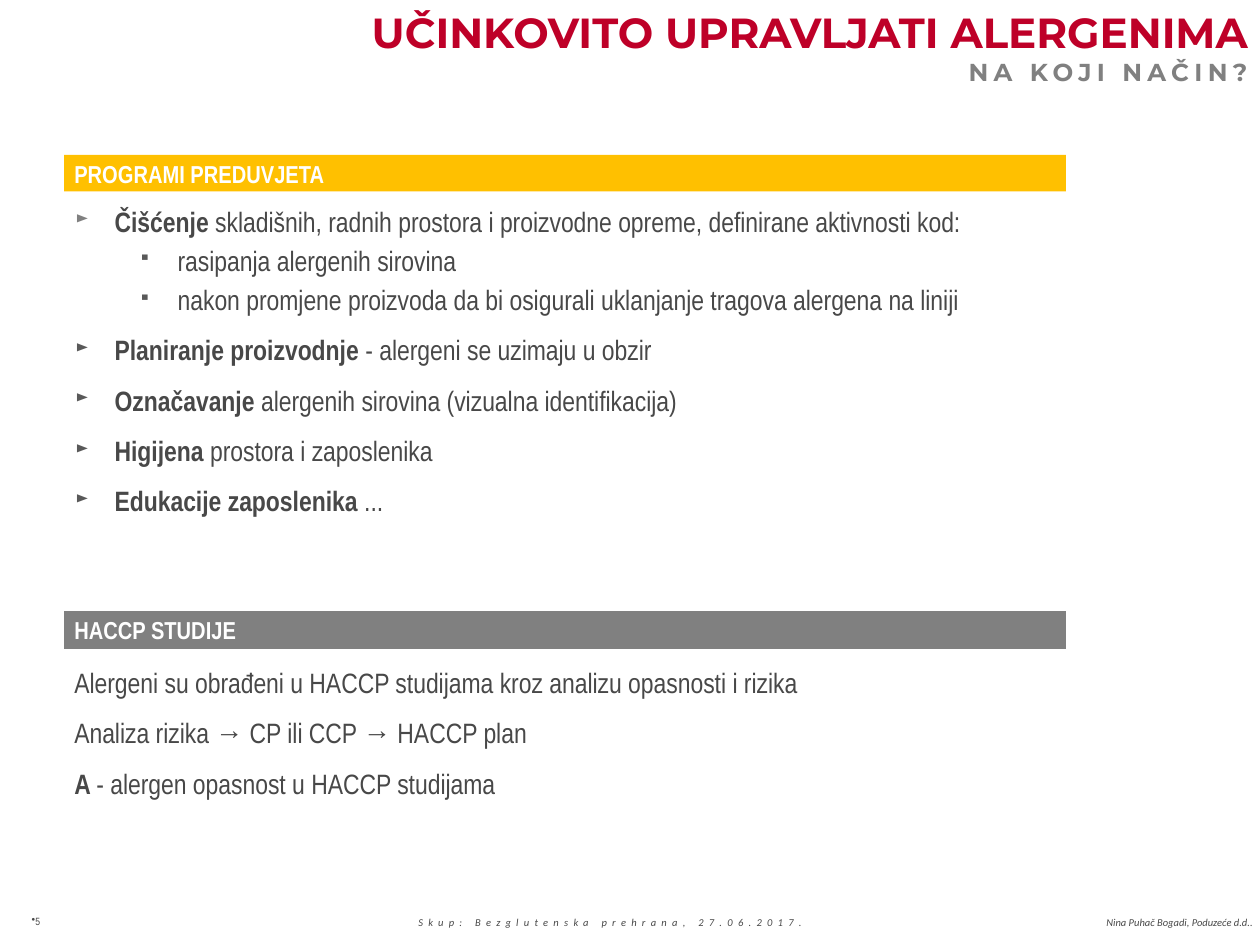
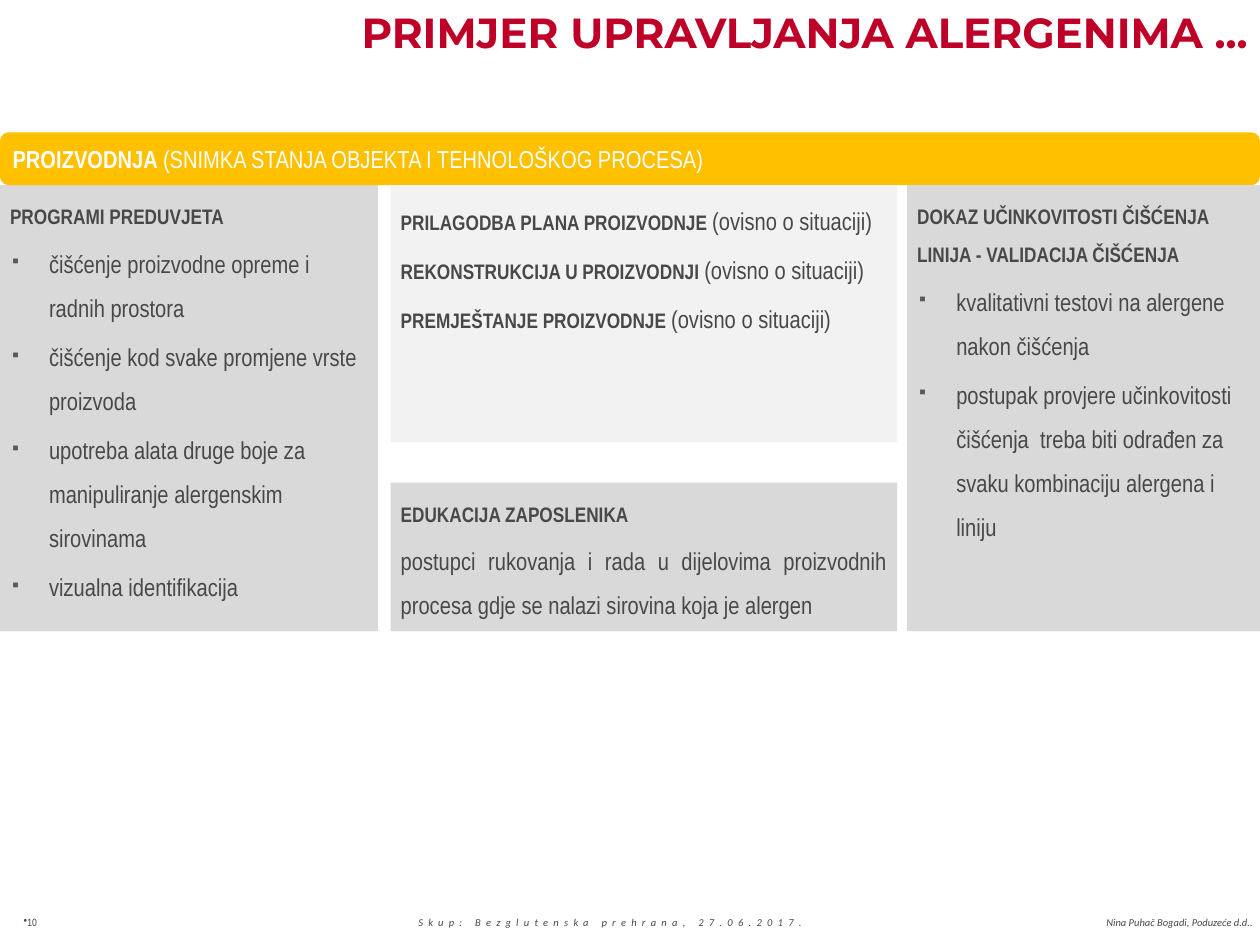
from dataclasses import dataclass

from lxml import etree
from pptx import Presentation
from pptx.dml.color import RGBColor
from pptx.enum import shapes, text
from pptx.oxml.ns import qn
from pptx.util import Inches, Pt

RED = RGBColor(0xBE, 0x00, 0x28)
AMBER = RGBColor(0xFF, 0xC0, 0x00)
GREY = RGBColor(0x80, 0x80, 0x80)
BULLET_GREY = RGBColor(0x59, 0x59, 0x59)
PANEL = RGBColor(0xD9, 0xD9, 0xD9)
PALE = RGBColor(0xF2, 0xF2, 0xF2)
INK = RGBColor(0x48, 0x48, 0x48)
WHITE = RGBColor(0xFF, 0xFF, 0xFF)

BODY_FONT, FOOTER_FONT, TITLE_FONT = "Arial Narrow", "Calibri", "Montserrat"
LEFT, RIGHT = text.PP_ALIGN.LEFT, text.PP_ALIGN.RIGHT
CENTER, JUSTIFY = text.PP_ALIGN.CENTER, text.PP_ALIGN.JUSTIFY

SLIDE_W, SLIDE_H = 10, 7.5
HANG = 0.31
FOOTER_TOP, FOOTER_W, FOOTER_H = 7.22, 3.78, 0.28
EVENT = "Skup: Bezglutenska prehrana, 27.06.2017."
AUTHOR = "Nina Puhač Bogadi, Poduzeće d.d.."


@dataclass
class Style:
    size: float
    color: RGBColor = INK
    bold: bool = False
    font: str = BODY_FONT
    italic: bool = False
    tracking: int = 0


TITLE = Style(24, RED, True, TITLE_FONT)
SUBTITLE = Style(14, GREY, True, TITLE_FONT, tracking=3)
FOOTER = Style(6, font=FOOTER_FONT, italic=True)
EVENT_FOOTER = Style(6, font=FOOTER_FONT, italic=True, tracking=3)
PAGE = Style(6)
BODY, STRONG = Style(16), Style(16, bold=True)
HEAD, DETAIL = Style(12, bold=True), Style(14)
BAND, BAND_STRONG = Style(14, WHITE), Style(14, WHITE, True)


def set_bullet(p, char, color=None, left=0, hang=0, size=None):
    pPr = p._p.get_or_add_pPr()
    pPr.set("marL", str(Inches(left)))
    pPr.set("indent", str(-Inches(hang)))
    if color is not None:
        clr = etree.SubElement(pPr, qn("a:buClr"))
        etree.SubElement(clr, qn("a:srgbClr"), val=str(color))
    if size:
        etree.SubElement(pPr, qn("a:buSzPct"), val=str(size * 1000))
    etree.SubElement(pPr, qn("a:buChar"), char=char)


def add_para(tf, runs, align=LEFT, spacing=None, gap=0, bullet=None):
    """Fill the first paragraph if empty, else append; gap is a share of the text size."""
    p = tf.paragraphs[0]
    if p.runs:
        p = tf.add_paragraph()
    p.alignment = align
    if spacing:
        p.line_spacing = spacing
    if gap:
        p.space_before = Pt(gap * max(style.size for _, style in runs))
    if bullet:
        set_bullet(p, **bullet)
    for words, style in runs:
        r = p.add_run()
        r.text = words
        f = r.font
        f.name, f.size, f.bold, f.italic = style.font, Pt(style.size), style.bold, style.italic
        f.color.rgb = style.color
        if style.tracking:
            r._r.get_or_add_rPr().set("spc", str(style.tracking * 100))


def set_frame(tf, side, top):
    tf.word_wrap = True
    tf.margin_left = tf.margin_right = Inches(side)
    tf.margin_top = tf.margin_bottom = Inches(top)


def add_text(s, box, side=0.1, top=0.05):
    tf = s.shapes.add_textbox(*map(Inches, box)).text_frame
    set_frame(tf, side, top)
    return tf


def add_filled(s, box, fill, kind=shapes.MSO_SHAPE.RECTANGLE, anchor=text.MSO_ANCHOR.TOP):
    sp = s.shapes.add_shape(kind, *map(Inches, box))
    sp.shadow.inherit = False
    sp.fill.solid()
    sp.fill.fore_color.rgb = fill
    sp.line.fill.background()
    tf = sp.text_frame
    set_frame(tf, 0.08, 0.05)
    tf.vertical_anchor = anchor
    return tf


def add_band(s, box, fill, runs, kind=shapes.MSO_SHAPE.RECTANGLE):
    tf = add_filled(s, box, fill, kind, text.MSO_ANCHOR.MIDDLE)
    add_para(tf, runs, gap=0.2)


def square_bullet(left=HANG):
    return dict(char="▪", color=BULLET_GREY, left=left, hang=HANG, size=60)


def arrow_bullet(color=BULLET_GREY):
    return dict(char="►", color=color, left=HANG, hang=HANG, size=60)


def add_frame(prs, title_left, title, page, page_box, subtitle=None):
    """Start a slide with its title, footers and page number."""
    s = prs.slides.add_slide(prs.slide_layouts[6])
    for left, words, style, align in ((2.95, EVENT, EVENT_FOOTER, CENTER),
                                      (6.26, AUTHOR, FOOTER, RIGHT)):
        tf = add_text(s, (left, FOOTER_TOP, FOOTER_W, FOOTER_H))
        add_para(tf, [(words, style)], align, gap=0.2)
    add_para(add_text(s, page_box), [(page, PAGE)], CENTER, bullet=dict(char="•"))
    tf = add_text(s, (title_left, 0, SLIDE_W - title_left, 0.6))
    add_para(tf, [(title, TITLE)], RIGHT)
    if subtitle:
        add_para(tf, [(subtitle, SUBTITLE)], RIGHT)
    return s


def add_prerequisites(s, left, top, width):
    add_band(s, (left, top, width, 0.29), AMBER, [("PROGRAMI PREDUVJETA", BAND_STRONG)])
    tf = add_text(s, (left + 0.01, top + 0.39, width, 2.6), 0.08, 0)
    add_para(tf, [("Čišćenje", STRONG),
                  (" skladišnih, radnih prostora i proizvodne opreme, "
                   "definirane aktivnosti kod:", BODY)],
             JUSTIFY, bullet=arrow_bullet(GREY))
    for activity in ("rasipanja alergenih sirovina",
                     "nakon promjene proizvoda da bi osigurali uklanjanje "
                     "tragova alergena na liniji"):
        add_para(tf, [(activity, BODY)], JUSTIFY, gap=0.2, bullet=square_bullet(0.81))
    for name, detail in (("Planiranje proizvodnje ", "- alergeni se uzimaju u obzir"),
                         ("Označavanje ", "alergenih sirovina (vizualna identifikacija)"),
                         ("Higijena ", "prostora i zaposlenika"),
                         ("Edukacije zaposlenika ", "...")):
        add_para(tf, [(name, STRONG), (detail, BODY)], JUSTIFY, 1.5, bullet=arrow_bullet())


def add_haccp(s, left, top, width):
    add_band(s, (left, top, width, 0.3), GREY, [("HACCP STUDIJE", BAND_STRONG)])
    tf = add_text(s, (left, top + 0.3, width, 1.15), 0.08, 0)
    for runs in ([("Alergeni su obrađeni u HACCP studijama kroz analizu "
                   "opasnosti i rizika", BODY)],
                 [("Analiza rizika → CP ili CCP → HACCP plan", BODY)],
                 [("A ", STRONG), ("- alergen opasnost u HACCP studijama", BODY)]):
        add_para(tf, runs, JUSTIFY, 1.5)


def add_panel(s, box, heading, items, bulleted=True, align=LEFT):
    tf = add_filled(s, box, PANEL)
    add_para(tf, [(heading, HEAD)], align, 1.5, 0.2)
    for item in items:
        add_para(tf, [(item, DETAIL)], align, 1.5, 0.2,
                 square_bullet() if bulleted else None)


def add_measures(s, box, measures):
    tf = add_filled(s, box, PALE)
    for measure in measures:
        add_para(tf, [(measure + " ", HEAD), ("(ovisno o situaciji)", DETAIL)],
                 spacing=1.5, gap=0.2)


def add_production(s, top):
    """Full-width band with three columns hanging below it."""
    band_h, column_h = 0.42, 3.54
    middle_left, middle_w, training_h = 3.1, 4.02, 1.18
    columns_top = top + band_h
    add_panel(s, (0, columns_top, 3, column_h), "PROGRAMI PREDUVJETA",
              ("čišćenje proizvodne opreme i radnih prostora",
               "čišćenje kod svake promjene vrste proizvoda",
               "upotreba alata druge boje za manipuliranje alergenskim sirovinama",
               "vizualna identifikacija"))
    add_band(s, (0, top, SLIDE_W, band_h), AMBER,
             [("PROIZVODNJA ", BAND_STRONG),
              ("(SNIMKA STANJA OBJEKTA I TEHNOLOŠKOG PROCESA)", BAND)],
             shapes.MSO_SHAPE.ROUNDED_RECTANGLE)
    add_panel(s, (7.2, columns_top, 2.8, column_h),
              "DOKAZ UČINKOVITOSTI ČIŠĆENJA LINIJA - VALIDACIJA ČIŠĆENJA",
              ("kvalitativni testovi na alergene nakon čišćenja",
               "postupak provjere učinkovitosti čišćenja  treba biti odrađen "
               "za svaku kombinaciju alergena i liniju"))
    add_measures(s, (middle_left, columns_top, middle_w, 2.04),
                 ("PRILAGODBA PLANA PROIZVODNJE", "REKONSTRUKCIJA U PROIZVODNJI",
                  "PREMJEŠTANJE PROIZVODNJE"))
    add_panel(s, (middle_left, columns_top + column_h - training_h, middle_w, training_h),
              "EDUKACIJA ZAPOSLENIKA",
              ("postupci rukovanja i rada u dijelovima proizvodnih procesa "
               "gdje se nalazi sirovina koja je alergen",),
              bulleted=False, align=JUSTIFY)


def main():
    prs = Presentation()
    prs.slide_width, prs.slide_height = Inches(SLIDE_W), Inches(SLIDE_H)

    s = add_frame(prs, 1.93, "UČINKOVITO UPRAVLJATI ALERGENIMA", "5",
                  (-0.02, 7.21, 0.61, FOOTER_H), "NA KOJI NAČIN?")
    add_prerequisites(s, 0.51, 1.23, 7.95)
    add_haccp(s, 0.51, 4.85, 7.95)

    s = add_frame(prs, 1.46, "PRIMJER UPRAVLJANJA ALERGENIMA ...", "10",
                  (0.04, FOOTER_TOP, 0.4, FOOTER_H))
    add_production(s, 1.05)

    prs.save("out.pptx")


if __name__ == "__main__":
    main()
